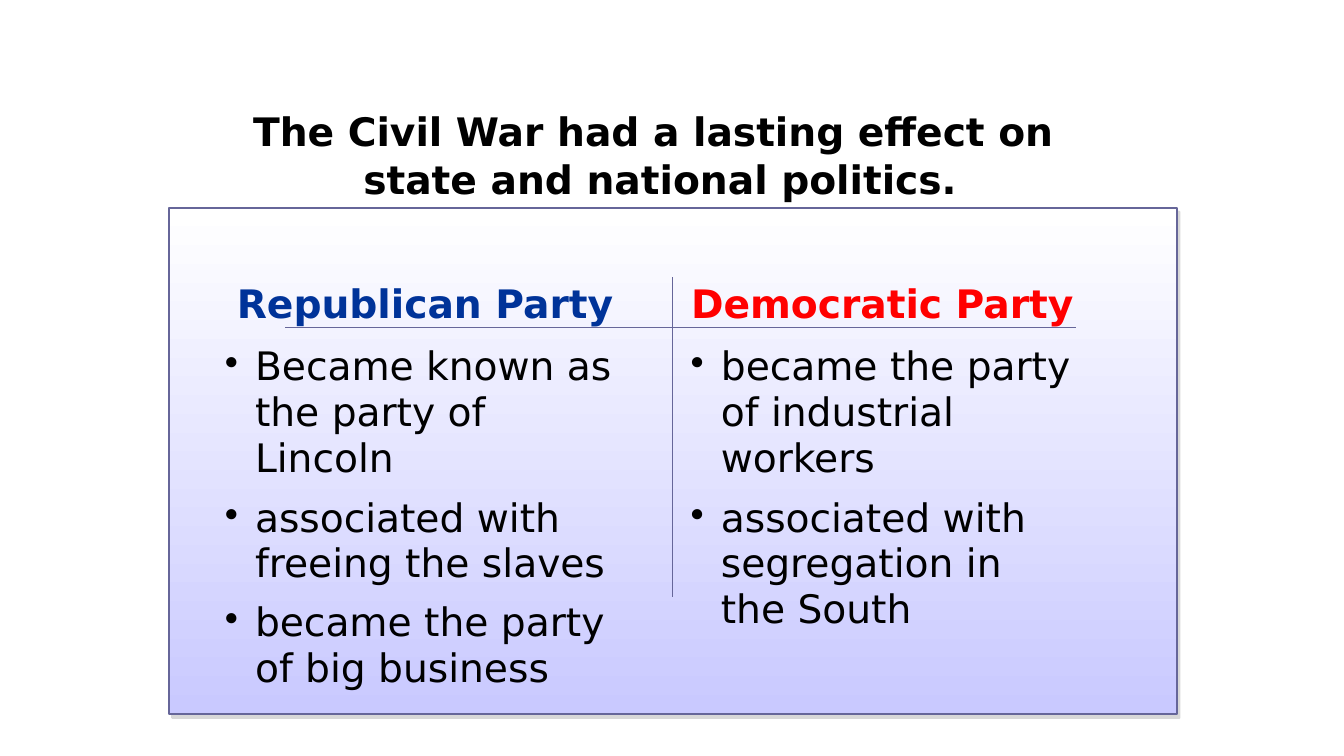
from dataclasses import dataclass

from lxml import etree
from pptx import Presentation
from pptx import util as u
from pptx.dml.color import RGBColor
from pptx.enum import shapes, text
from pptx.oxml import ns


@dataclass(frozen=True)
class Theme:
    font: str = "DejaVu Sans"
    size: int = 28
    ink: str = "000000"
    republican: str = "003399"
    democratic: str = "FF0000"
    rule: str = "666699"
    panel_top: str = "FFFFFF"
    panel_bottom: str = "C9C9FF"
    shadow: str = "B2B2B2"


theme = Theme()
NO_GRID = "{2D5ABB26-0587-4C30-8999-92F81FD0307C}"


def add_xml(parent, tag, **attributes):
    return etree.SubElement(parent, ns.qn(tag), attributes)


def add_span(para, words, color, bold):
    span = para.add_run()
    span.text = words
    span.font.name = theme.font
    span.font.size = u.Pt(theme.size)
    span.font.bold = bold
    span.font.color.rgb = RGBColor.from_string(color)


deck = Presentation()
deck.slide_width = u.Inches(13.33)
deck.slide_height = u.Inches(7.5)
page = deck.slides.add_slide(deck.slide_layouts[6])

panel = page.shapes.add_shape(
    shapes.MSO_SHAPE.RECTANGLE, u.Inches(1.68), u.Inches(2.06), u.Inches(9.99), u.Inches(5.02)
)
panel.fill.gradient()
panel.fill.gradient_angle = 270
for stop, color in zip(panel.fill.gradient_stops, (theme.panel_top, theme.panel_bottom)):
    stop.color.rgb = RGBColor.from_string(color)
panel.line.color.rgb = RGBColor.from_string(theme.rule)
panel.line.width = u.Pt(1.5)
panel.shadow.inherit = False
effects = panel._element.spPr.find(ns.qn("a:effectLst"))
shadow = add_xml(effects, "a:outerShdw", blurRad="0", dist=str(u.Pt(3.6)),
                 dir=str(56 * 60000), algn="ctr", rotWithShape="0")
shadow_color = add_xml(shadow, "a:srgbClr", val=theme.shadow)
add_xml(shadow_color, "a:alpha", val="50000")

title = page.shapes.add_textbox(u.Inches(1.42), u.Inches(1.02), u.Inches(10.25), u.Inches(1.04))
title.text_frame.word_wrap = True
title.text_frame.auto_size = text.MSO_AUTO_SIZE.SHAPE_TO_FIT_TEXT
para = title.text_frame.paragraphs[0]
para.alignment = text.PP_ALIGN.CENTER
add_span(para, "The Civil War had a lasting effect on ", theme.ink, True)
para.add_line_break()
add_span(para, "state and national politics.", theme.ink, True)

parties = [
    ("Democratic Party", theme.democratic, 6.75, 4, (0.62, 1.5, 1.5, 0.62),
     ["became the party of industrial workers",
      "associated with segregation in the South"]),
    ("Republican Party", theme.republican, 2.13, 4.17, (0.62, 1.5, 1.03, 1.03),
     ["Became known as the party of Lincoln",
      "associated with freeing the slaves",
      "became the party of big business"]),
]
for party, party_color, left, width, heights, points in parties:
    frame = page.shapes.add_table(
        len(heights), 1, u.Inches(left), u.Inches(2.75), u.Inches(width), u.Inches(sum(heights))
    )
    table = frame.table
    table.first_row = False
    table.horz_banding = False
    table._tbl.tblPr.find(ns.qn("a:tableStyleId")).text = NO_GRID
    for row, height in zip(table.rows, heights):
        row.height = u.Inches(height)
        row.cells[0].fill.background()
    for index, words in enumerate([party, *points]):
        para = table.cell(index, 0).text_frame.paragraphs[0]
        is_heading = index == 0
        properties = para._p.get_or_add_pPr()
        before = add_xml(properties, "a:spcBef")
        add_xml(before, "a:spcPct", val="20000")
        if is_heading:
            para.alignment = text.PP_ALIGN.CENTER
        else:
            properties.set("marL", str(u.Inches(0.3)))
            properties.set("indent", str(u.Inches(-0.3)))
            add_xml(properties, "a:buChar", char="•")
        add_span(para, words, party_color if is_heading else theme.ink, is_heading)

for x1, y1, x2, y2 in [(2.83, 3.25, 10.67, 3.25), (6.67, 2.75, 6.67, 5.92)]:
    divider = page.shapes.add_connector(
        shapes.MSO_CONNECTOR.STRAIGHT, u.Inches(x1), u.Inches(y1), u.Inches(x2), u.Inches(y2)
    )
    divider.line.color.rgb = RGBColor.from_string(theme.rule)
    divider.line.width = u.Pt(0.75)
    add_xml(divider._element.spPr, "a:effectLst")

deck.save("out.pptx")
